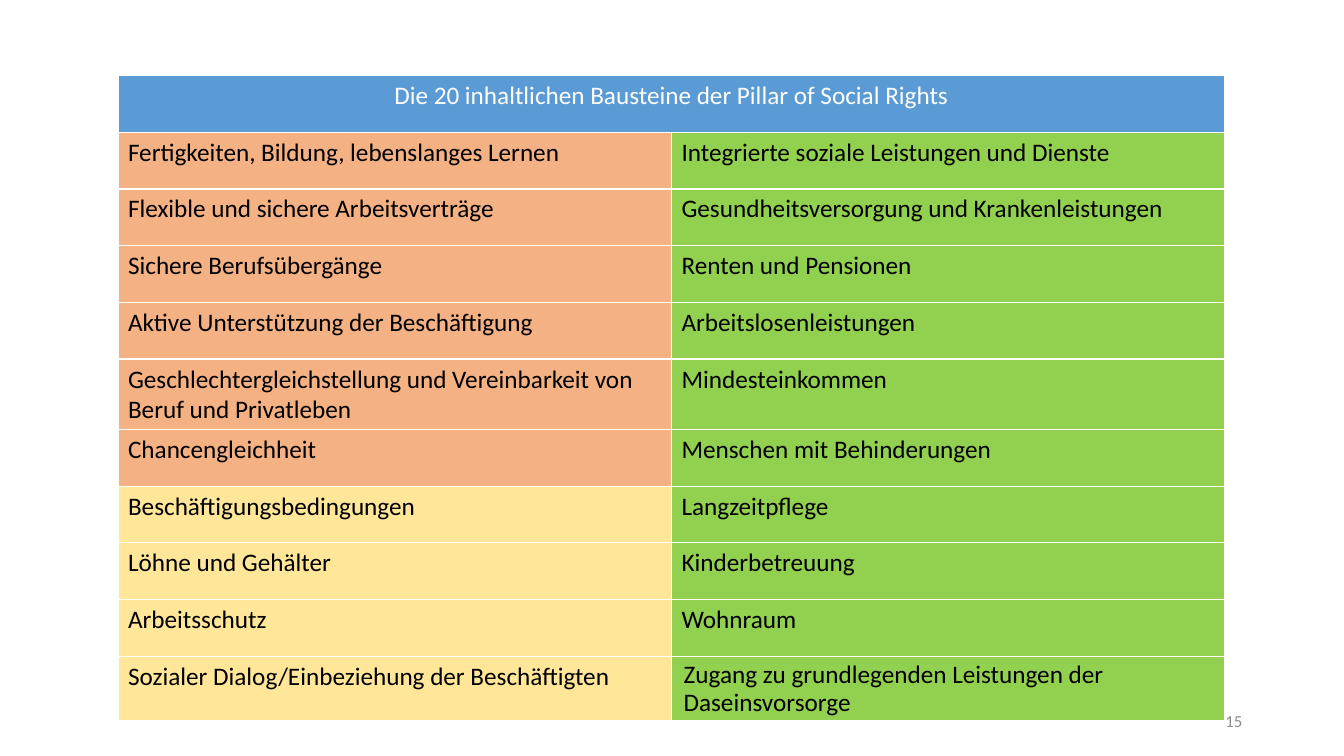
import pptx
import pptx.dml.color
import pptx.enum.text
import pptx.oxml
import pptx.oxml.ns
import pptx.util
from dataclasses import dataclass
from pptx.util import Inches


@dataclass(frozen=True)
class Theme:
    font: str = "Calibri"
    body_size: int = 18
    number_size: int = 12
    header: str = "5B9BD5"
    opportunity: str = "F4B183"
    work: str = "FFE699"
    protection: str = "92D050"
    white: str = "FFFFFF"
    black: str = "000000"
    grey: str = "8C8C8C"


THEME = Theme()
HEADING = "Die 20 inhaltlichen Bausteine der Pillar of Social Rights"
OPPORTUNITIES = [
    "Fertigkeiten, Bildung, lebenslanges Lernen",
    "Flexible und sichere Arbeitsverträge",
    "Sichere Berufsübergänge",
    "Aktive Unterstützung der Beschäftigung",
    "Geschlechtergleichstellung und Vereinbarkeit von Beruf und Privatleben",
    "Chancengleichheit",
]
WORKING_CONDITIONS = [
    "Beschäftigungsbedingungen",
    "Löhne und Gehälter",
    "Arbeitsschutz",
    "Sozialer Dialog/Einbeziehung der Beschäftigten",
]
SOCIAL_PROTECTION = [
    "Integrierte soziale Leistungen und Dienste",
    "Gesundheitsversorgung und Krankenleistungen",
    "Renten und Pensionen",
    "Arbeitslosenleistungen",
    "Mindesteinkommen",
    "Menschen mit Behinderungen",
    "Langzeitpflege",
    "Kinderbetreuung",
    "Wohnraum",
    "Zugang zu grundlegenden Leistungen der Daseinsvorsorge",
]


def rgb(color):
    return pptx.dml.color.RGBColor.from_string(color)


def write_text(text_frame, text, size, color, alignment):
    text_frame.text = text
    paragraph = text_frame.paragraphs[0]
    paragraph.alignment = alignment
    font = paragraph.runs[0].font
    font.name = THEME.font
    font.size = pptx.util.Pt(size)
    font.bold = False
    font.color.rgb = rgb(color)
    return paragraph


def set_borders(cell, color, width):
    properties = cell._tc.get_or_add_tcPr()
    for index, side in enumerate(("lnL", "lnR", "lnT", "lnB")):
        line = pptx.oxml.parse_xml(
            f'<a:{side} {pptx.oxml.ns.nsdecls("a")} w="{pptx.util.Pt(width)}">'
            f'<a:solidFill><a:srgbClr val="{color}"/></a:solidFill></a:{side}>'
        )
        properties.insert(index, line)


def fill_cell(cell, text, fill, color=THEME.black,
              alignment=pptx.enum.text.PP_ALIGN.LEFT):
    cell.fill.solid()
    cell.fill.fore_color.rgb = rgb(fill)
    set_borders(cell, THEME.white, 1)
    return write_text(cell.text_frame, text, THEME.body_size, color, alignment)


def add_rights_table(slide):
    # Each column lists its texts together with the colour of their chapter
    left = [(text, THEME.opportunity) for text in OPPORTUNITIES]
    left += [(text, THEME.work) for text in WORKING_CONDITIONS]
    right = [(text, THEME.protection) for text in SOCIAL_PROTECTION]
    row_count = len(right) + 1

    frame = slide.shapes.add_table(
        row_count, 2, Inches(1.17), Inches(0.75),
        Inches(10.98), Inches(0.5625 * row_count))
    table = frame.table
    table.horz_banding = False

    # Heading across both columns
    table.cell(0, 0).merge(table.cell(0, 1))
    fill_cell(table.cell(0, 0), HEADING, THEME.header, THEME.white,
              pptx.enum.text.PP_ALIGN.CENTER)

    # Building blocks
    for column, entries in enumerate((left, right)):
        for row, (text, fill) in enumerate(entries, start=1):
            paragraph = fill_cell(table.cell(row, column), text, fill)

    # The closing entry is set tighter
    paragraph.line_spacing = 0.9
    paragraph.space_before = pptx.util.Pt(5)
    paragraph._p.get_or_add_pPr().set("marL", str(Inches(0.02)))


def add_slide_number(slide, number):
    box = slide.shapes.add_textbox(
        Inches(9.42), Inches(6.95), Inches(3), Inches(0.4))
    box.text_frame.word_wrap = True
    box.text_frame.vertical_anchor = pptx.enum.text.MSO_ANCHOR.MIDDLE
    write_text(box.text_frame, number, THEME.number_size, THEME.grey,
               pptx.enum.text.PP_ALIGN.RIGHT)


def main():
    presentation = pptx.Presentation()
    presentation.slide_width = Inches(13.33)
    presentation.slide_height = Inches(7.5)
    slide = presentation.slides.add_slide(presentation.slide_layouts[6])
    add_slide_number(slide, "15")
    add_rights_table(slide)
    presentation.save("out.pptx")


if __name__ == "__main__":
    main()
